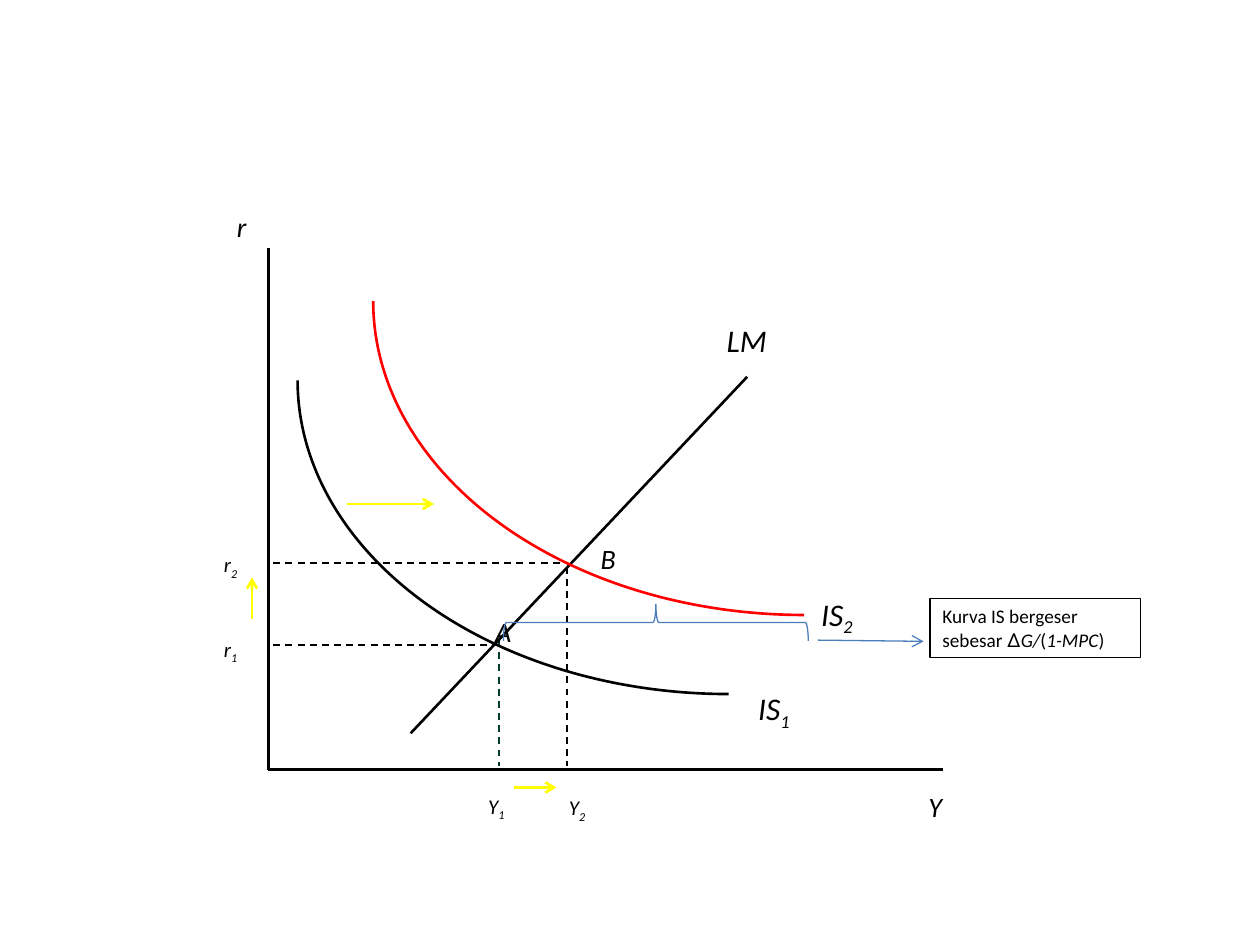
from dataclasses import dataclass
from typing import Any

from lxml.etree import SubElement
from pptx import Presentation
from pptx.dml.color import RGBColor
from pptx.enum.dml import MSO_LINE
from pptx.enum.shapes import MSO_CONNECTOR, MSO_SHAPE
from pptx.enum.text import MSO_ANCHOR, MSO_AUTO_SIZE, PP_ALIGN
from pptx.oxml.ns import qn
from pptx.util import Pt

COLORS = {
    "ink": "000000",
    "shift": "FFFF00",
    "new_curve": "FF0000",
    "guide": "023A2B",
    "note": "4B7EBC",
}
FONT = "Calibri"
FRAME_FORMAT = {
    "word_wrap": True,
    "auto_size": MSO_AUTO_SIZE.SHAPE_TO_FIT_TEXT,
    "vertical_anchor": MSO_ANCHOR.TOP,
}


@dataclass(frozen=True)
class Segment:
    start: tuple[float, float]
    end: tuple[float, float]
    color: str = "ink"
    width: float = 1.5
    dashed: bool = False
    arrow: bool = False


@dataclass(frozen=True)
class Outline:
    preset: MSO_SHAPE
    box: tuple[float, float, float, float]
    color: str = "ink"
    width: float = 1.5
    rotation: float = 0


@dataclass(frozen=True)
class Label:
    symbol: str
    box: tuple[float, float, float, float]
    size: float
    subscript: str = ""
    align: PP_ALIGN = PP_ALIGN.LEFT


def tick(symbol: str, subscript: str, left: float, top: float) -> Label:
    """Describe a small centred value label beside an axis."""
    return Label(symbol, (left, top, 36, 21.8), 12, subscript, PP_ALIGN.CENTER)


def is_curve(left: float, top: float, color: str) -> Outline:
    return Outline(MSO_SHAPE.ARC, (left, top, 492.5, 358.6), color, rotation=180)


ORIGIN = (153.4, 439.9)
GUIDE_LEFT, GUIDE_BOTTOM = 156.2, 437.8
R1, R2 = 368.6, 321.8
Y1, Y2 = 285.1, 324

AXES = [
    Segment((ORIGIN[0], 141.8), ORIGIN),
    Segment(ORIGIN, (538.6, ORIGIN[1])),
]
LM_LINE = Segment((234.7, 419), (427, 215.3))
GUIDES = [
    Segment((GUIDE_LEFT, R1), (282.2, R1), width=1, dashed=True),
    Segment((Y1, 365.8), (Y1, GUIDE_BOTTOM), "guide", 1, dashed=True),
    Segment((GUIDE_LEFT, R2), (Y2, R2), width=1, dashed=True),
    Segment((Y2, 324), (Y2, GUIDE_BOTTOM), width=1, dashed=True),
]
SHIFT_ARROWS = [
    Segment((144, 354), (144, 330), "shift", arrow=True),
    Segment((198, 288), (248, 288), "shift", arrow=True),
    Segment((294, 450), (318, 450), "shift", arrow=True),
]
NOTE_ARROW = Segment((467.3, 365.8), (527.8, 366.5), "note", 0.75, arrow=True)

IS_CURVES = [is_curve(170, 38, "ink"), is_curve(213.2, -7.2, "new_curve")]
BRACE = Outline(MSO_SHAPE.LEFT_BRACE, (364.3, 268.6, 20.9, 174.2), "note", 0.75, 90)
NOTE_BOX = Outline(MSO_SHAPE.RECTANGLE, (531.4, 342, 120.2, 33.8), width=0.75)

LABELS = [
    Label("r", (128.2, 116, 41.8, 26.6), 16),
    Label("Y", (523.4, 447.8, 58.3, 26.6), 16),
    Label("LM", (408.2, 180, 46.8, 29), 18),
    Label("IS", (426.2, 390.2, 48.2, 29), 18, "1"),
    Label("IS", (462.2, 336.2, 48.2, 29), 18, "2"),
    Label("A", (275.8, 347.8, 34.6, 26.6), 16),
    Label("B", (336.2, 306, 30.2, 26.6), 16),
    tick("r", "1", 113.8, 360),
    tick("r", "2", 113.8, 311.8),
    tick("Y", "1", 265.7, 450),
    tick("Y", "2", 311.8, 450.7),
]
NOTE_RUNS = [
    ("Kurva IS bergeser sebesar ", {}),
    ("∆", {"name": "Roboto"}),
    ("G/", {"italic": True}),
    ("(", {}),
    ("1-MPC", {"italic": True}),
    (")", {}),
]


def rgb(color: str) -> RGBColor:
    return RGBColor.from_string(COLORS[color])


def apply_format(target: Any, values: dict[str, Any]) -> None:
    for attribute, value in values.items():
        setattr(target, attribute, value)


def style_line(line: Any, color: str, width: float) -> None:
    line.color.rgb = rgb(color)
    line.width = Pt(width)


def add_run(paragraph: Any, text: str, size: float, **overrides: Any) -> Any:
    run = paragraph.add_run()
    run.text = text
    apply_format(run.font, {"name": FONT, "size": Pt(size), "italic": False, **overrides})
    run.font.color.rgb = rgb("ink")
    return run


def draw_segment(slide: Any, segment: Segment) -> None:
    ends = [Pt(value) for value in (*segment.start, *segment.end)]
    connector = slide.shapes.add_connector(MSO_CONNECTOR.STRAIGHT, *ends)
    style_line(connector.line, segment.color, segment.width)
    if segment.dashed:
        connector.line.dash_style = MSO_LINE.DASH
    properties = connector._element.spPr
    if segment.arrow:
        SubElement(properties.find(qn("a:ln")), qn("a:tailEnd"), type="arrow")
    SubElement(properties, qn("a:effectLst"))


def draw_outline(slide: Any, outline: Outline) -> Any:
    shape = slide.shapes.add_shape(outline.preset, *map(Pt, outline.box))
    shape.rotation = outline.rotation
    shape.shadow.inherit = False
    shape.fill.background()
    style_line(shape.line, outline.color, outline.width)
    return shape


def draw_label(slide: Any, label: Label) -> None:
    frame = slide.shapes.add_textbox(*map(Pt, label.box)).text_frame
    apply_format(frame, FRAME_FORMAT)
    paragraph = frame.paragraphs[0]
    paragraph.alignment = label.align
    add_run(paragraph, label.symbol, label.size, italic=True)
    if label.subscript:
        run = add_run(paragraph, label.subscript, label.size, italic=True)
        run.font._element.set("baseline", "-25000")


def draw_note(slide: Any) -> None:
    frame = draw_outline(slide, NOTE_BOX).text_frame
    apply_format(frame, FRAME_FORMAT)
    paragraph = frame.paragraphs[0]
    paragraph.alignment = PP_ALIGN.LEFT
    for text, overrides in NOTE_RUNS:
        add_run(paragraph, text, 11, **overrides)


def main() -> None:
    deck = Presentation()
    deck.slide_width, deck.slide_height = Pt(720), Pt(540)
    slide = deck.slides.add_slide(deck.slide_layouts[6])
    for segment in [*AXES, *GUIDES, LM_LINE]:
        draw_segment(slide, segment)
    for curve in IS_CURVES:
        draw_outline(slide, curve)
    for arrow in SHIFT_ARROWS:
        draw_segment(slide, arrow)
    for label in LABELS:
        draw_label(slide, label)
    draw_outline(slide, BRACE)
    draw_note(slide)
    draw_segment(slide, NOTE_ARROW)
    deck.save("out.pptx")


if __name__ == "__main__":
    main()
